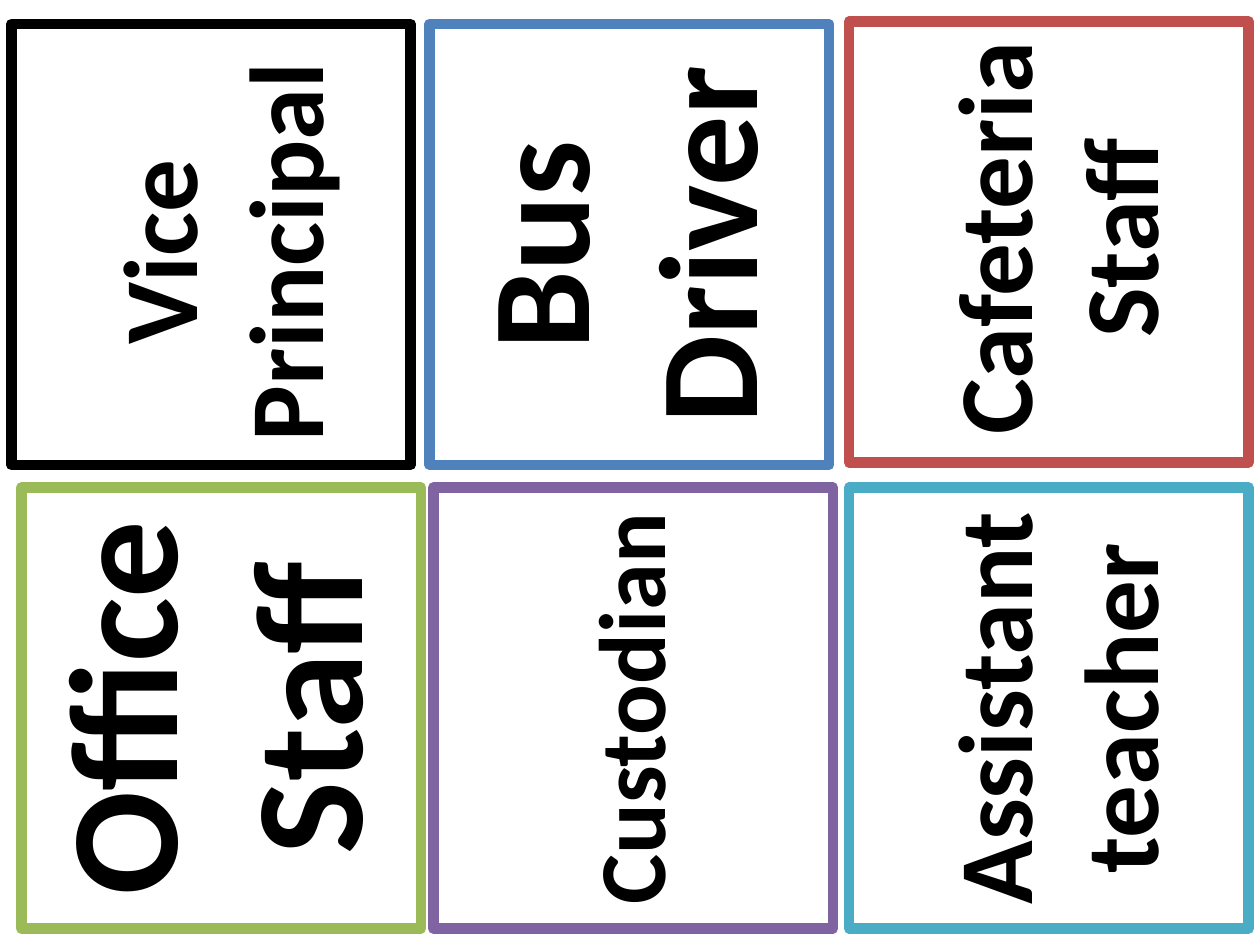
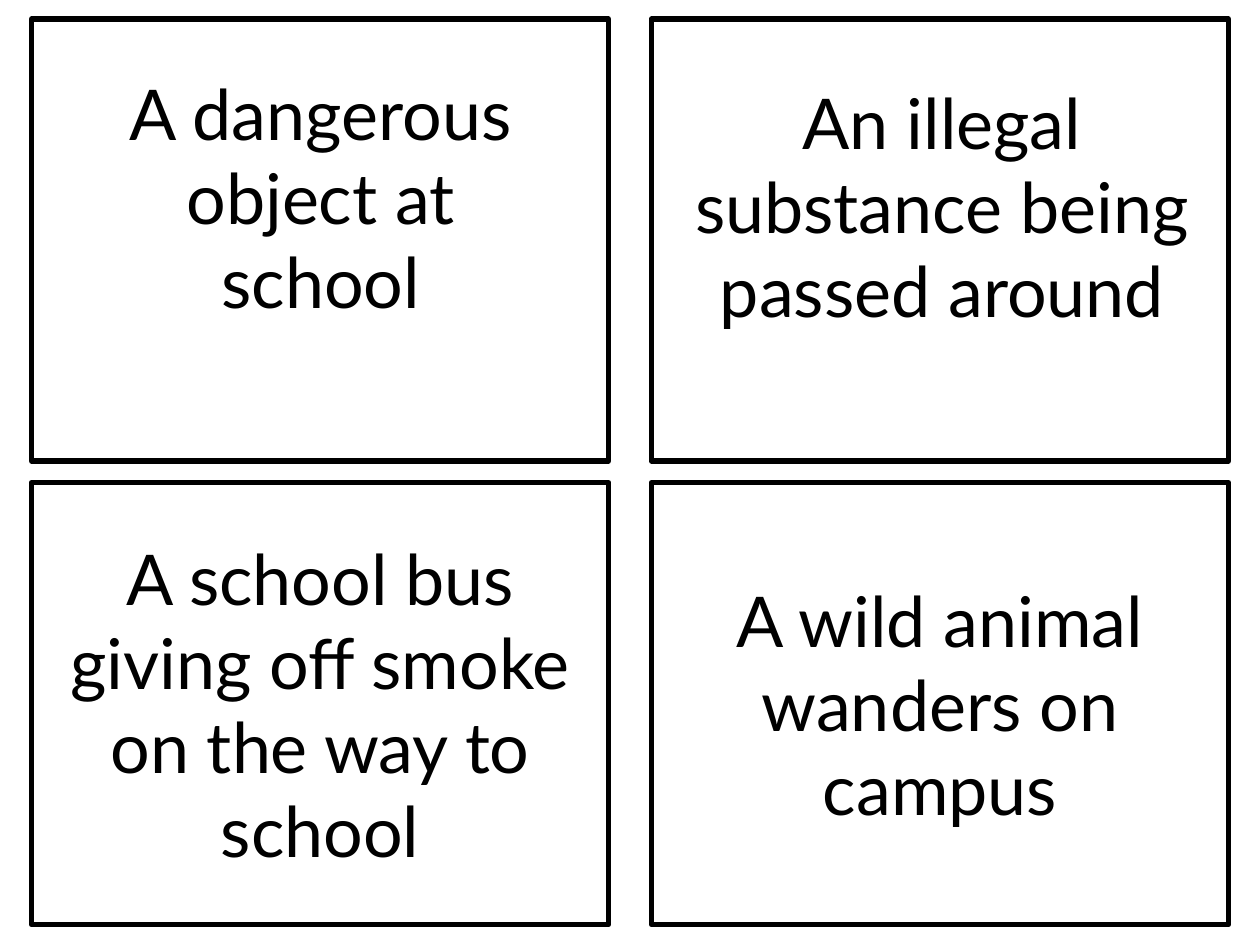
from pptx import Presentation
from pptx.dml.color import RGBColor
from pptx.enum.shapes import MSO_SHAPE
from pptx.enum.text import MSO_ANCHOR, PP_ALIGN
from pptx.util import Pt

PX = 9144
BLACK = "000000"
WHITE = "FFFFFF"


def write(shape, text, size=40, font="Lato", bold=False, turn=0, anchor=MSO_ANCHOR.TOP):
    shape.rotation = turn
    frame = shape.text_frame
    frame.word_wrap = True
    frame.vertical_anchor = anchor
    para = frame.paragraphs[0]
    para.alignment = PP_ALIGN.CENTER
    run = para.add_run()
    run.text = text
    run.font.size = Pt(size)
    run.font.name = font
    run.font.bold = bold
    run.font.color.rgb = RGBColor.from_string(BLACK)


def card(slide, box, color, width):
    shape = slide.shapes.add_shape(MSO_SHAPE.RECTANGLE, *[n * PX for n in box])
    shape.shadow.inherit = False
    shape.fill.solid()
    shape.fill.fore_color.rgb = RGBColor.from_string(WHITE)
    shape.line.color.rgb = RGBColor.from_string(color)
    shape.line.width = Pt(width)
    return shape


deck = Presentation()
deck.slide_width = 1000 * PX
deck.slide_height = 750 * PX
blank = deck.slide_layouts[6]

staff = deck.slides.add_slide(blank)
frames = [
    (674, 387, "4BACC6"),
    (344, 387, "8064A2"),
    (674, 17, "C0504D"),
    (341, 19, "4F81BD"),
    (17, 387, "9BBB59"),
    (9, 19, BLACK),
]
for left, top, color in frames:
    card(staff, (left, top, 317, 350), color, 6)

roles = [
    ("Vice Principal", 60, (8, 94, 333, 212)),
    ("Bus Driver", 80, (309, 55, 365, 279)),
    ("Cafeteria Staff", 60, (668, 83, 339, 212)),
    ("Office Staff", 88, (-8, 409, 350, 306)),
    ("Custodian", 54, (324, 512, 350, 101)),
    ("Assistant teacher", 60, (662, 456, 350, 212)),
]
for text, size, box in roles:
    label = staff.shapes.add_textbox(*[n * PX for n in box])
    write(label, text, size=size, font="Calibri", bold=True, turn=270)

events = deck.slides.add_slide(blank)
columns = [
    (25, "A dangerous object at school", (88, 51, 333, 279),
     "A school bus giving off smoke on the way to school"),
    (517, "An illegal substance being passed around", (535, 58, 425, 279),
     "A wild animal wanders on campus"),
]
for left, upper, box, lower in columns:
    card(events, (left, 15, 458, 351), BLACK, 3)
    label = events.shapes.add_textbox(*[n * PX for n in box])
    write(label, upper)
    base = card(events, (left, 383, 458, 351), BLACK, 3)
    write(base, lower, anchor=MSO_ANCHOR.MIDDLE)

deck.save("out.pptx")
